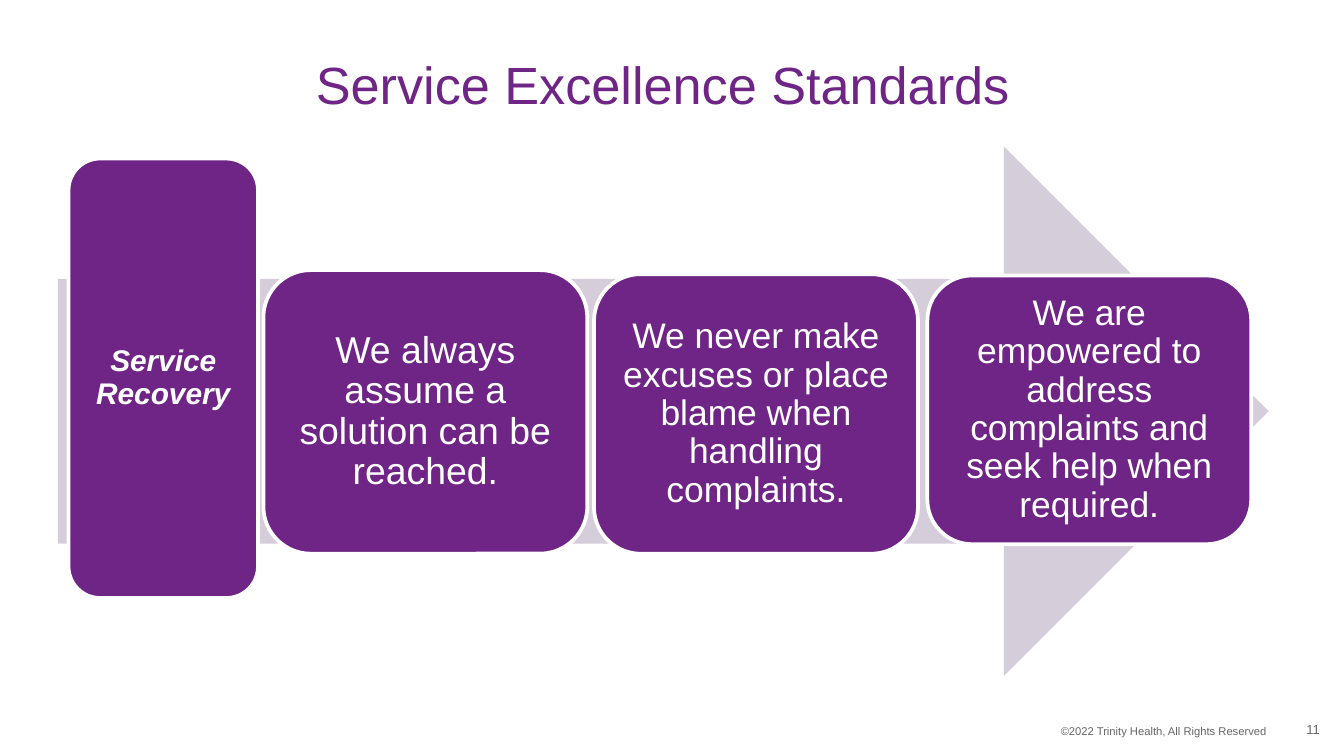
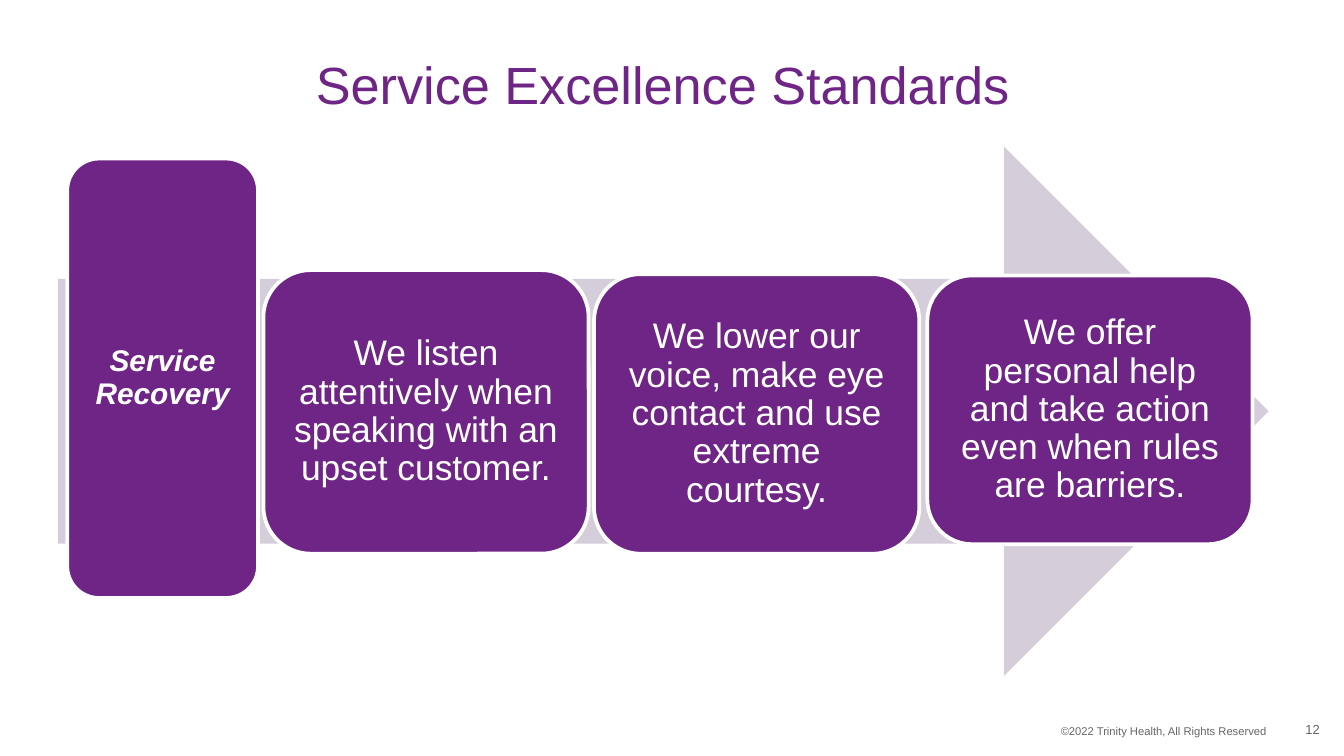
import pptx
import pptx.dml.color
import pptx.enum.shapes
import pptx.enum.text
import pptx.util

Inches = pptx.util.Inches
Shapes = pptx.enum.shapes.MSO_SHAPE
Align = pptx.enum.text.PP_ALIGN
Anchor = pptx.enum.text.MSO_ANCHOR

PURPLE = "6E2585"
LILAC = "D5CDD9"
WHITE = "FFFFFF"
GREY = "666666"


def color(value):
    return pptx.dml.color.RGBColor.from_string(value)


def write(box, text, size, ink, align, anchor, insets, spacing=1.0):
    frame = box.text_frame
    frame.word_wrap = True
    frame.vertical_anchor = anchor
    frame.margin_left, frame.margin_top, frame.margin_right, frame.margin_bottom = map(Inches, insets)
    para = frame.paragraphs[0]
    para.text = text
    para.alignment = align
    para.line_spacing = spacing
    para.font.name = "Arial"
    para.font.size = pptx.util.Pt(size)
    para.font.color.rgb = color(ink)
    return para


deck = pptx.Presentation()
deck.slide_width = Inches(10)
deck.slide_height = deck.slide_width * 9 // 16

card_places = [(1.96, 2.01, 2.11), (4.42, 2.04, 2.08), (6.9, 2.05, 2)]
pages = [
    (11, 0.51, 1.41, 2.41, [
        ("We always assume a solution can be reached.", 20),
        ("We never make excuses or place blame when handling complaints.", 19),
        ("We are empowered to address complaints and seek help when required.", 19),
    ]),
    (12, 0.5, 1.42, 2.42, [
        ("We listen attentively when speaking with an upset customer.", 19),
        ("We lower our voice, make eye contact and use extreme courtesy.", 19),
        ("We offer personal help and take action even when rules are barriers.", 19),
    ]),
]

for number, topic_left, topic_width, card_width, standards in pages:
    page = deck.slides.add_slide(deck.slide_layouts[6])

    title = page.shapes.add_textbox(Inches(0.43), Inches(0.38), Inches(9), Inches(0.55))
    write(title, "Service Excellence Standards", 28, PURPLE, Align.CENTER, Anchor.MIDDLE, [0] * 4, 0.9)

    footer = page.shapes.add_textbox(Inches(5.33), Inches(5.34), Inches(4.19), Inches(0.2))
    write(footer, "©2022 Trinity Health, All Rights Reserved", 6, GREY,
          Align.RIGHT, Anchor.TOP, (0.1, 0.05, 0.1, 0.05))

    page_number = page.shapes.add_textbox(Inches(9.38), Inches(5.28), Inches(0.44), Inches(0.3))
    write(page_number, str(number), 7, GREY, Align.RIGHT, Anchor.MIDDLE, (0.1, 0.05, 0, 0.05))

    arrow = page.shapes.add_shape(Shapes.RIGHT_ARROW, Inches(0.43), Inches(1.09), Inches(9.01), Inches(3.94))
    arrow.shadow.inherit = False
    arrow.fill.solid()
    arrow.fill.fore_color.rgb = color(LILAC)
    arrow.line.fill.background()

    cards = [("Service Recovery", 16, topic_left, 1.18, topic_width, 3.27, 0.07)]
    for (text, size), (left, top, height) in zip(standards, card_places):
        cards.append((text, size, left, top, card_width, height, 0.08))

    for index, (text, size, left, top, width, height, inset) in enumerate(cards):
        card = page.shapes.add_shape(
            Shapes.ROUNDED_RECTANGLE, Inches(left), Inches(top), Inches(width), Inches(height))
        card.shadow.inherit = False
        card.fill.solid()
        card.fill.fore_color.rgb = color(PURPLE)
        card.line.color.rgb = color(WHITE)
        card.line.width = pptx.util.Pt(2)
        para = write(card, text, size, WHITE, Align.CENTER, Anchor.MIDDLE, [inset] * 4, 0.9)
        if index == 0:
            para.font.bold = True
            para.font.italic = True

deck.save("out.pptx")
